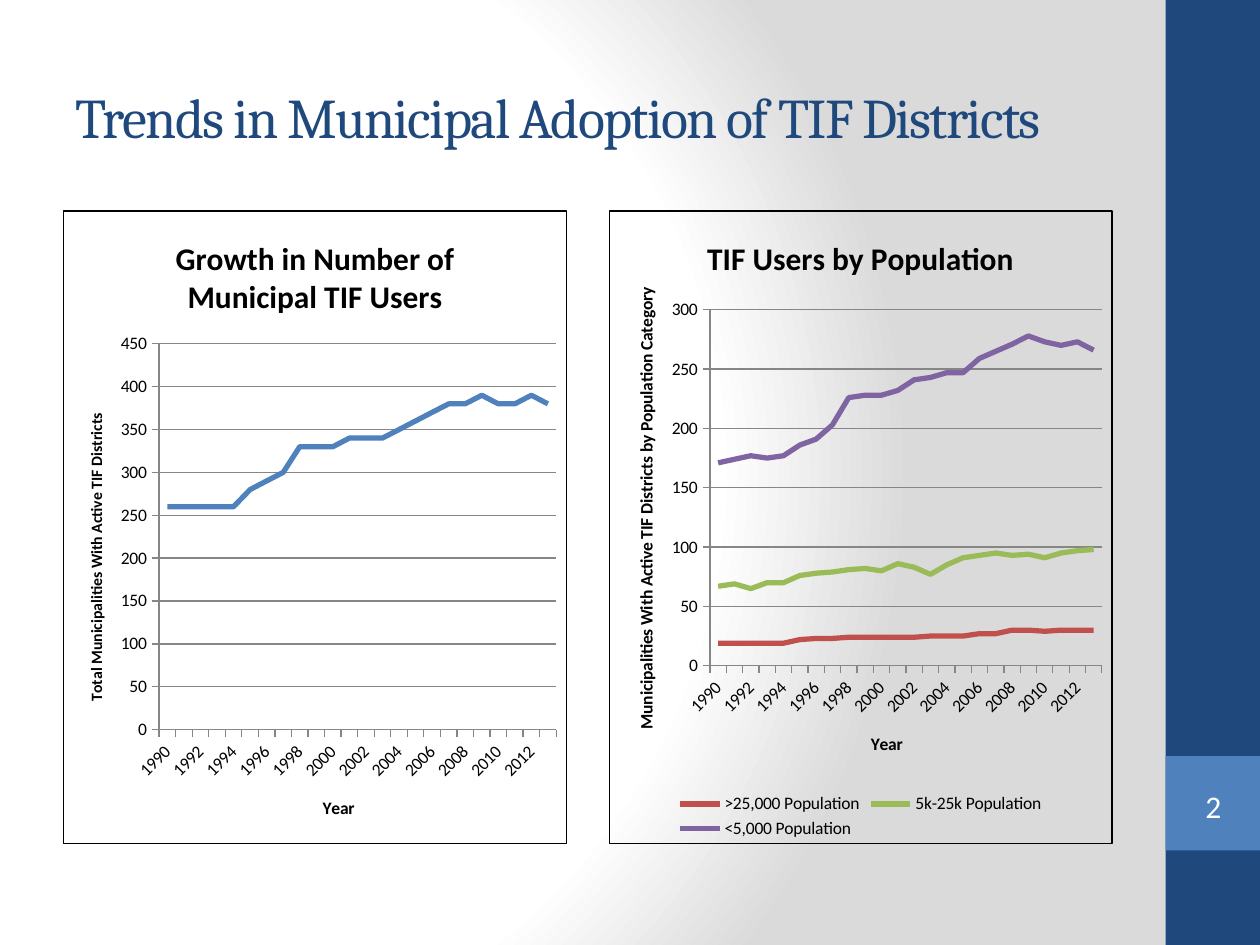
"""Build the slide on municipal adoption of TIF districts."""
from pptx import Presentation
from pptx import util as u
from pptx.chart.data import CategoryChartData
from pptx.dml.color import RGBColor
from pptx.enum import chart as ch, shapes, text
from pptx.oxml import parse_xml
from pptx.oxml.ns import nsdecls

NAVY, BLUE, WHITE, BLACK, GREY = "1F497D", "4F81BD", "FFFFFF", "000000", "868686"
STOPS = [(0, WHITE), (75, WHITE), (100, "DADADA")]
YEARS = [str(year) for year in range(1990, 2014)]
TOTAL = [
    ("Series 1", BLUE, [260, 260, 260, 260, 260, 280, 290, 300, 330, 330, 330, 340,
                        340, 340, 350, 360, 370, 380, 380, 390, 380, 380, 390, 380]),
]
GROUPS = [
    (">25,000 Population", "C0504D", [19, 19, 19, 19, 19, 22, 23, 23, 24, 24, 24, 24,
                                      24, 25, 25, 25, 27, 27, 30, 30, 29, 30, 30, 30]),
    ("5k-25k Population", "9BBB59", [67, 69, 65, 70, 70, 76, 78, 79, 81, 82, 80, 86,
                                     83, 77, 85, 91, 93, 95, 93, 94, 91, 95, 97, 98]),
    ("<5,000 Population", "8064A2", [171, 174, 177, 175, 177, 186, 191, 203, 226, 228, 228, 232,
                                     241, 243, 247, 247, 259, 265, 271, 278, 273, 270, 273, 266]),
]


def color(code):
    """Turn a hex string into a colour."""
    return RGBColor.from_string(code)


def box(at):
    """Turn left, top, width and height in inches into lengths."""
    return [u.Inches(size) for size in at]


def style(font, size, code=BLACK, name="Calibri", bold=False):
    """Set the look of a font."""
    font.size, font.name, font.bold = u.Pt(size), name, bold
    font.color.rgb = color(code)


def add_back(slide):
    """Fill the background with a round gradient."""
    stops = "".join(
        f'<a:gs pos="{pos * 1000}"><a:srgbClr val="{code}"/></a:gs>' for pos, code in STOPS)
    back = parse_xml(
        f'<p:bg {nsdecls("p", "a")}><p:bgPr><a:gradFill rotWithShape="1">'
        f'<a:gsLst>{stops}</a:gsLst><a:path path="circle">'
        '<a:fillToRect l="20000" t="50000" r="100000" b="50000"/></a:path>'
        '</a:gradFill><a:effectLst/></p:bgPr></p:bg>')
    slide.shapes._spTree.addprevious(back)


def add_block(slide, at, code):
    """Add a plain filled rectangle."""
    block = slide.shapes.add_shape(shapes.MSO_SHAPE.RECTANGLE, *box(at))
    block.shadow.inherit = False
    block.fill.solid()
    block.fill.fore_color.rgb = color(code)
    block.line.fill.background()


def add_title(slide, words, at):
    """Add the heading with tight letter spacing."""
    frame = slide.shapes.add_textbox(*box(at)).text_frame
    frame.word_wrap = True
    frame.vertical_anchor = text.MSO_ANCHOR.MIDDLE
    frame.text = words
    run = frame.paragraphs[0].runs[0]
    style(run.font, 32, NAVY, "Cambria")
    run._r.get_or_add_rPr().set("spc", "-100")


def add_number(slide, words, at):
    """Add the page number in a bracket pair."""
    mark = slide.shapes.add_shape(shapes.MSO_SHAPE.DOUBLE_BRACKET, *box(at))
    mark.adjustments[0] = 0.18
    mark.shadow.inherit = False
    mark.fill.background()
    mark.line.fill.background()
    frame = mark.text_frame
    frame.margin_left = frame.margin_right = frame.margin_top = frame.margin_bottom = 0
    frame.vertical_anchor = text.MSO_ANCHOR.MIDDLE
    frame.text = words
    frame.paragraphs[0].alignment = text.PP_ALIGN.CENTER
    style(frame.paragraphs[0].runs[0].font, 18, WHITE)


def set_head(owner, words, size):
    """Give a chart or an axis a bold title."""
    owner.has_title = True
    frame = (owner.chart_title if hasattr(owner, "chart_title") else owner.axis_title).text_frame
    frame.text = words
    style(frame.paragraphs[0].runs[0].font, size, bold=True)


def set_line(line, code, width):
    """Set the colour and width of a line."""
    line.color.rgb = color(code)
    line.width = u.Pt(width)


def set_axis(axis, words, size):
    """Set the title, ticks and line of an axis."""
    set_head(axis, words, size)
    axis.major_tick_mark = ch.XL_TICK_MARK.OUTSIDE
    axis.minor_tick_mark = ch.XL_TICK_MARK.NONE
    set_line(axis.format.line, GREY, 0.75)
    style(axis.tick_labels.font, 10)


def add_frame(chart):
    """Draw a thin border round a clear chart area."""
    area = parse_xml(
        f'<c:spPr {nsdecls("c", "a")}><a:noFill/><a:ln w="9525"><a:solidFill>'
        f'<a:srgbClr val="{BLACK}"/></a:solidFill></a:ln></c:spPr>')
    chart._chartSpace.find("{*}txPr").addprevious(area)


def place_plot(chart, at):
    """Place the inner plot by shares of the chart size."""
    parts = "".join(f'<c:{key} val="{share}"/>' for key, share in zip("xywh", at))
    plot = chart._chartSpace.find("{*}chart/{*}plotArea")
    for old in plot.findall("{*}layout"):
        plot.remove(old)
    plot.insert(0, parse_xml(
        f'<c:layout {nsdecls("c")}><c:manualLayout><c:layoutTarget val="inner"/>'
        f'<c:xMode val="edge"/><c:yMode val="edge"/>{parts}</c:manualLayout></c:layout>'))


def add_lines(slide, at, head, label, size, rows, top):
    """Add a framed line chart over the years."""
    data = CategoryChartData()
    data.categories = YEARS
    for name, _, values in rows:
        data.add_series(name, values)
    chart = slide.shapes.add_chart(ch.XL_CHART_TYPE.LINE, *box(at), data).chart
    style(chart.font, 10)
    add_frame(chart)
    set_head(chart, head, 18)
    set_axis(chart.category_axis, "Year", 10)
    turn = chart.category_axis._element.find("{*}txPr/{*}bodyPr")
    turn.set("rot", "-2700000")
    axis = chart.value_axis
    set_axis(axis, label, size)
    axis.minimum_scale, axis.maximum_scale, axis.major_unit = 0, top, 50
    axis.has_major_gridlines = True
    set_line(axis.major_gridlines.format.line, GREY, 0.75)
    chart.plots[0].vary_by_categories = False
    for line, (_, code, _) in zip(chart.plots[0].series, rows):
        line.smooth = False
        line.marker.style = ch.XL_MARKER_STYLE.NONE
        set_line(line.format.line, code, 3)
    chart.has_legend = len(rows) > 1
    if chart.has_legend:
        chart.legend.position = ch.XL_LEGEND_POSITION.BOTTOM
        chart.legend.include_in_layout = False
        style(chart.legend.font, 10)
    return chart


def main():
    """Build and save the slide."""
    deck = Presentation()
    deck.slide_width, deck.slide_height = u.Inches(10), u.Inches(7.5)
    slide = deck.slides.add_slide(deck.slide_layouts[6])
    add_back(slide)
    add_block(slide, (9.25, 0, 0.75, 7.5), NAVY)
    add_block(slide, (9.25, 6, 0.75, 0.75), BLUE)
    add_title(slide, "Trends in Municipal Adoption of TIF Districts", (0.5, 0.3, 8.33, 1.25))
    growth = add_lines(slide, (0.5, 1.67, 4, 5.03), "Growth in Number of Municipal TIF Users",
                       "Total Municipalities With Active TIF Districts", 9, TOTAL, 450)
    place_plot(growth, (0.19, 0.21, 0.79, 0.61))
    add_lines(slide, (4.83, 1.67, 4, 5.03), "TIF Users by Population",
              "Municipalities With Active TIF Districts by Population Category", 10, GROUPS, 300)
    add_number(slide, "2", (9.33, 6.18, 0.6, 0.43))
    deck.save("out.pptx")


if __name__ == "__main__":
    main()
